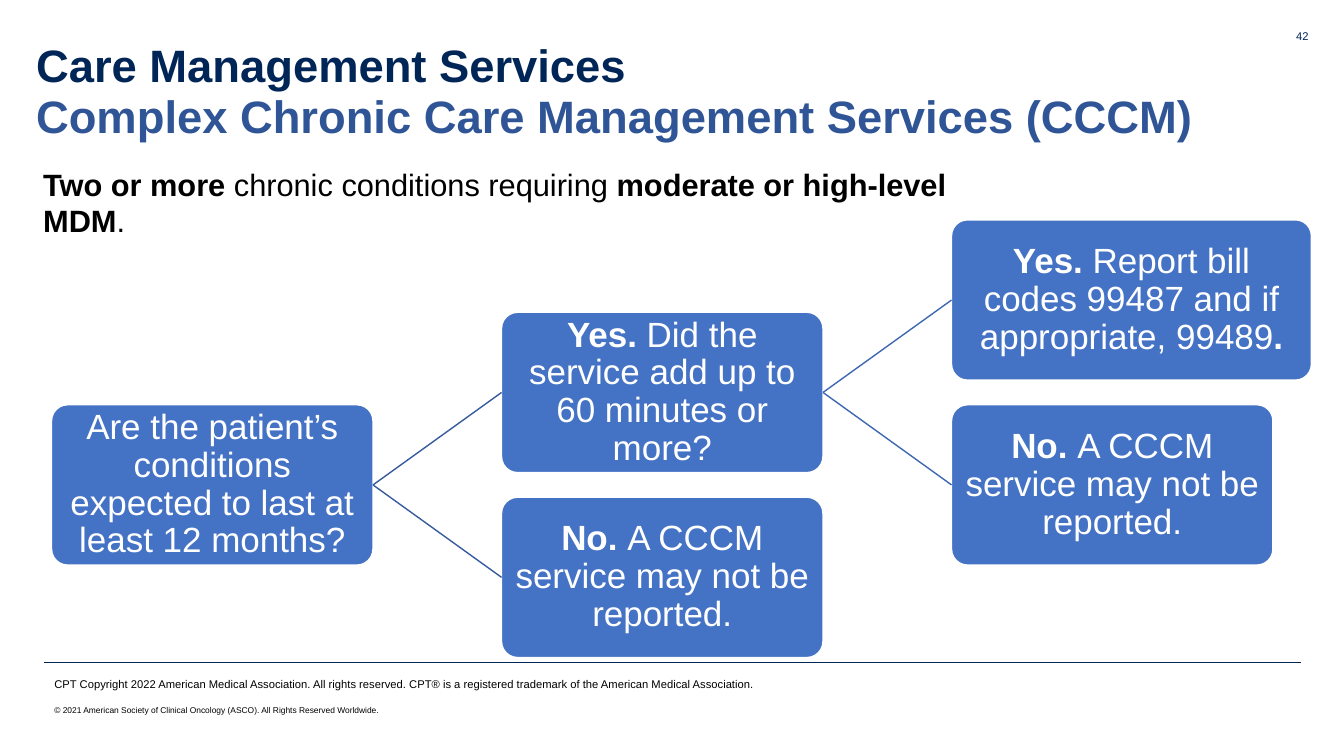
from lxml import etree
from pptx import Presentation
from pptx.dml.color import RGBColor
from pptx.enum.shapes import MSO_CONNECTOR, MSO_SHAPE
from pptx.enum.text import MSO_ANCHOR, PP_ALIGN
from pptx.oxml.ns import qn
from pptx.util import Cm, Pt

NAVY = RGBColor(0x00, 0x25, 0x57)
TITLE_BLUE = RGBColor(0x2F, 0x55, 0x97)
BOX_BLUE = RGBColor(0x44, 0x72, 0xC4)
FIRST_LINK = RGBColor(0x36, 0x5B, 0x9D)
SECOND_LINK = RGBColor(0x3E, 0x67, 0xB2)
BLACK = RGBColor(0, 0, 0)
WHITE = RGBColor(255, 255, 255)

STRAIGHT = MSO_CONNECTOR.STRAIGHT
ROUNDED = MSO_SHAPE.ROUNDED_RECTANGLE
TOP, MIDDLE = MSO_ANCHOR.TOP, MSO_ANCHOR.MIDDLE
LEFT, CENTER, RIGHT = PP_ALIGN.LEFT, PP_ALIGN.CENTER, PP_ALIGN.RIGHT
LEFT_SIDE, RIGHT_SIDE = 1, 3

# Decision tree: name -> (column, row, width in cm, [(text, bold)])
NOT_REPORTED = [("No. ", True), ("A CCCM service may not be reported.", False)]
DECISIONS = {
    "duration": (0, 2, 8.1, [("Are the patient’s conditions expected to last "
                              "at least 12 months?", False)]),
    "minutes": (1, 1, 8.1, [("Yes. ", True),
                            ("Did the service add up to 60 minutes or more?", False)]),
    "too short": (1, 3, 8.1, NOT_REPORTED),
    "report": (2, 0, 9.07, [("Yes. ", True),
                            ("Report bill codes 99487 and if appropriate, 99489", False),
                            (".", True)]),
    "too few minutes": (2, 2, 8.1, NOT_REPORTED),
}
LINKS = [("duration", "minutes", FIRST_LINK), ("duration", "too short", FIRST_LINK),
         ("minutes", "report", SECOND_LINK), ("minutes", "too few minutes", SECOND_LINK)]


def write(paragraph, runs, size, color, align=LEFT):
    for text, bold in runs:
        run = paragraph.add_run()
        run.text = text
        run.font.bold = bold
    paragraph.alignment = align
    paragraph.font.name = "Arial"
    paragraph.font.size = Pt(size)
    paragraph.font.color.rgb = color


def add_text(slide, box, runs, size, color, align=LEFT, anchor=TOP):
    frame = slide.shapes.add_textbox(*map(Cm, box)).text_frame
    frame.word_wrap = True
    frame.vertical_anchor = anchor
    write(frame.paragraphs[0], runs, size, color, align)
    return frame


def add_line(slide, start, end, color, width):
    line = slide.shapes.add_connector(STRAIGHT, *map(Cm, start + end))
    line.line.color.rgb = color
    line.line.width = Pt(width)
    properties = line._element.spPr
    etree.SubElement(properties, qn("a:effectLst"))
    return line


def add_heading(slide, box):
    frame = add_text(slide, box, [("Care Management Services", True)], 32.4, NAVY)
    frame.margin_top = 0
    write(frame.add_paragraph(),
          [("Complex Chronic Care Management Services (CCCM)", True)], 32.4, TITLE_BLUE)
    for paragraph in frame.paragraphs:
        paragraph.line_spacing = 0.94


def add_decision(slide, box, runs):
    decision = slide.shapes.add_shape(ROUNDED, *map(Cm, box))
    decision.adjustments[0] = 0.1
    decision.shadow.inherit = False
    decision.fill.solid()
    decision.fill.fore_color.rgb = BOX_BLUE
    decision.line.color.rgb = WHITE
    decision.line.width = Pt(1)
    frame = decision.text_frame
    frame.word_wrap = True
    frame.vertical_anchor = MIDDLE
    frame.margin_left = frame.margin_right = Cm(0.16)
    frame.margin_top = frame.margin_bottom = Cm(0.16)
    write(frame.paragraphs[0], runs, 25, WHITE, CENTER)
    frame.paragraphs[0].line_spacing = 0.9
    return decision


def add_decision_tree(slide, box):
    left, top, width, height = box
    column_step = (width - 9.07) / 2
    box_height = 4.04
    row_step = (height - box_height) / 3
    decisions = {}
    for name, (column, row, box_width, runs) in DECISIONS.items():
        place = (left + column * column_step, top + row * row_step, box_width, box_height)
        decisions[name] = add_decision(slide, place, runs)
    for question, answer, color in LINKS:
        link = add_line(slide, (0, 0), (0, 0), color, 1)
        link.begin_connect(decisions[question], RIGHT_SIDE)
        link.end_connect(decisions[answer], LEFT_SIDE)


def add_footer(slide, box):
    left, top, width, _ = box
    add_line(slide, (left, top), (left + width, top), NAVY, 0.25)
    add_text(slide, (left, top + 0.25, 22.96, 0.61),
             [("CPT Copyright 2022 American Medical Association. All rights reserved. "
               "CPT® is a registered trademark of the American Medical Association.", False)],
             8, BLACK)
    add_text(slide, (left, top + 0.69, 11.43, 1.02),
             [("© 2021 American Society of Clinical Oncology (ASCO). "
               "All Rights Reserved Worldwide.", False)], 6, BLACK, anchor=MIDDLE)


def main():
    deck = Presentation()
    deck.slide_width, deck.slide_height = Cm(33.87), Cm(19.05)
    slide = deck.slides.add_slide(deck.slide_layouts[6])

    # Heading and page number
    add_heading(slide, (0.66, 1.05, 30.91, 3.68))
    add_text(slide, (30.84, 0.61, 2.39, 1.02), [("42", False)], 8, NAVY, RIGHT)

    # Condition for the service
    add_text(slide, (0.84, 4.04, 23.55, 2.13),
             [("Two or more ", True), ("chronic conditions requiring ", False),
              ("moderate or high-level MDM", True), (".", False)], 22, BLACK)

    add_decision_tree(slide, (1.3, 5.54, 31.75, 11.03))
    add_footer(slide, (1.12, 16.69, 31.67, 1.71))
    deck.save("out.pptx")


if __name__ == "__main__":
    main()
